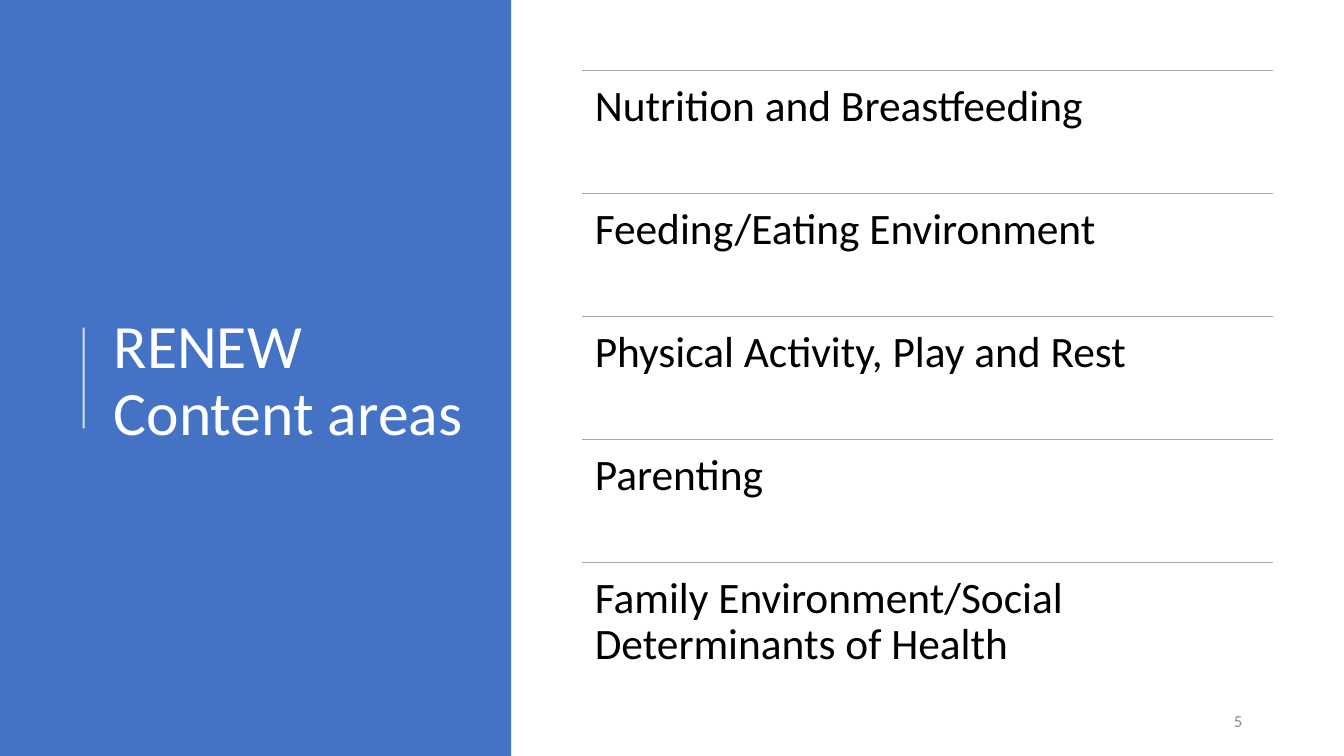
from pptx import Presentation
from pptx.dml.color import RGBColor
from pptx.enum.shapes import MSO_CONNECTOR, MSO_SHAPE
from pptx.enum.text import MSO_ANCHOR, PP_ALIGN
from pptx.oxml.ns import qn
from pptx.util import Pt
from lxml import etree

RECTANGLE, STRAIGHT = MSO_SHAPE.RECTANGLE, MSO_CONNECTOR.STRAIGHT
TOP, MIDDLE = MSO_ANCHOR.TOP, MSO_ANCHOR.MIDDLE
LEFT, RIGHT = PP_ALIGN.LEFT, PP_ALIGN.RIGHT

# Content
TITLE = "RENEW Content areas"
AREAS = [
    "Nutrition and Breastfeeding",
    "Feeding/Eating Environment",
    "Physical Activity, Play and Rest",
    "Parenting",
    "Family Environment/Social Determinants of Health",
]
PAGE_NUMBER = "5"

# Format
COLORS = {"panel": "4472C4", "white": "FFFFFF", "rule": "A5A5A5",
          "text": "000000", "number": "8C8C8C"}
FONT = "Calibri"
PX = 9144  # 100 px to the inch
SLIDE_WIDTH, SLIDE_HEIGHT = 1333, 750
PANEL_WIDTH = 507
LIST_LEFT, LIST_TOP, LIST_WIDTH, ROW_HEIGHT = 577, 70, 686, 122
TITLE_FORMAT = {"size": 44, "color": "white", "anchor": MIDDLE,
                "paragraph": {"alignment": LEFT, "line_spacing": 0.9}}
AREA_FORMAT = {"size": 31, "color": "text", "anchor": TOP, "inset": 13,
               "paragraph": {"alignment": LEFT, "line_spacing": 0.9}}
NUMBER_FORMAT = {"size": 12, "color": "number", "anchor": MIDDLE,
                 "paragraph": {"alignment": RIGHT}}


def color(name):
    return RGBColor.from_string(COLORS[name])


def emu(*lengths):
    return [length * PX for length in lengths]


def add_text(slide, text, box, style):
    frame = slide.shapes.add_textbox(*emu(*box)).text_frame
    frame.word_wrap = True
    frame.vertical_anchor = style["anchor"]
    if "inset" in style:
        for side in ("left", "top", "right", "bottom"):
            setattr(frame, f"margin_{side}", style["inset"] * PX)
    paragraph = frame.paragraphs[0]
    for name, value in style["paragraph"].items():
        setattr(paragraph, name, value)
    run = paragraph.add_run()
    run.text = text
    for name, value in {"name": FONT, "size": Pt(style["size"])}.items():
        setattr(run.font, name, value)
    run.font.color.rgb = color(style["color"])


def add_line(slide, ends, color_name, width, opacity=100):
    connector = slide.shapes.add_connector(STRAIGHT, *emu(*ends))
    connector.line.color.rgb = color(color_name)
    connector.line.width = Pt(width)
    properties = connector._element.spPr
    if opacity < 100:
        fill = properties.find(".//" + qn("a:srgbClr"))
        etree.SubElement(fill, qn("a:alpha")).set("val", str(opacity * 1000))
    etree.SubElement(properties, qn("a:effectLst"))


def main():
    presentation = Presentation()
    presentation.slide_width, presentation.slide_height = emu(SLIDE_WIDTH, SLIDE_HEIGHT)
    slide = presentation.slides.add_slide(presentation.slide_layouts[6])

    # Title panel
    panel = slide.shapes.add_shape(RECTANGLE, *emu(0, 0, PANEL_WIDTH, SLIDE_HEIGHT))
    panel.shadow.inherit = False
    panel.fill.solid()
    panel.fill.fore_color.rgb = color("panel")
    panel.line.fill.background()
    add_text(slide, TITLE, (103, 78, 369, 602), TITLE_FORMAT)
    add_line(slide, (83, 425, 83, 325), "white", 1.5, opacity=80)

    # Ruled list of content areas
    for row, area in enumerate(AREAS):
        top = LIST_TOP + row * ROW_HEIGHT
        add_line(slide, (LIST_LEFT, top, LIST_LEFT + LIST_WIDTH, top), "rule", 0.5)
        add_text(slide, area, (LIST_LEFT, top, LIST_WIDTH, ROW_HEIGHT), AREA_FORMAT)

    # Page number
    add_text(slide, PAGE_NUMBER, (942, 695, 300, 40), NUMBER_FORMAT)
    presentation.save("out.pptx")


if __name__ == "__main__":
    main()
